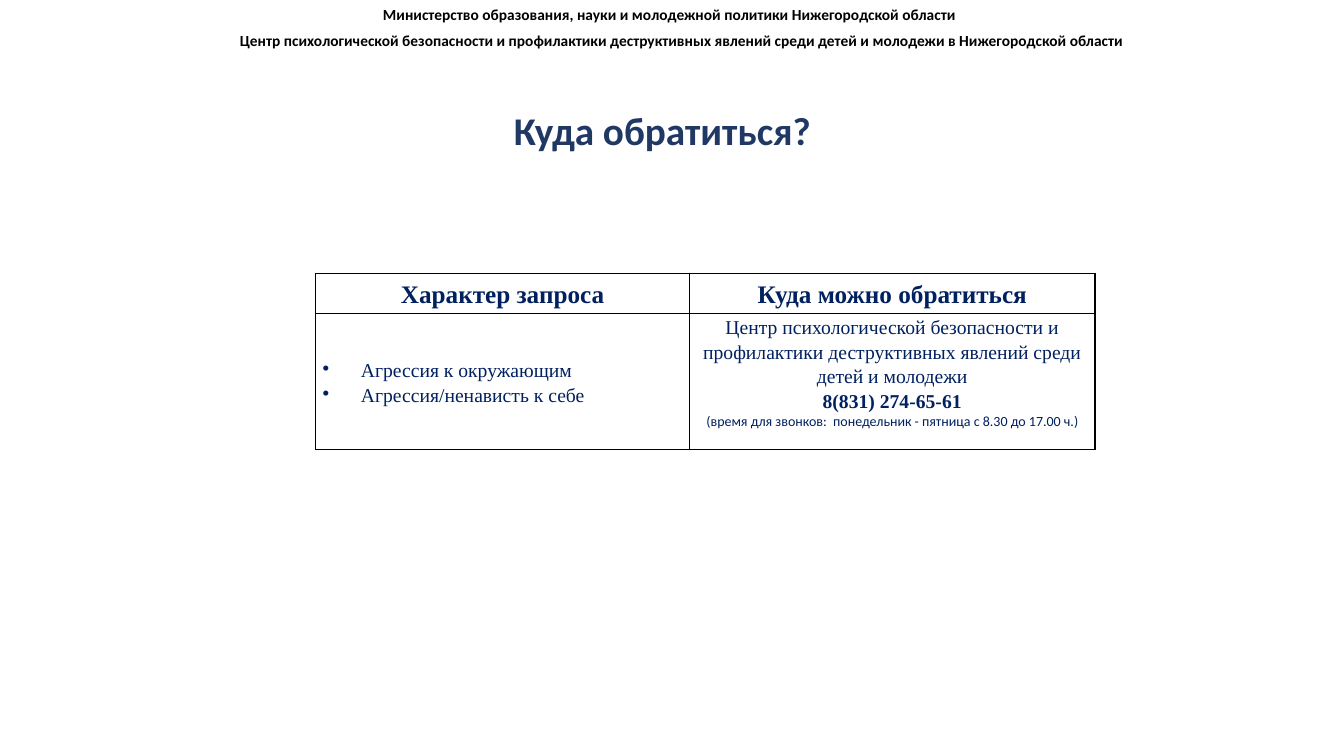
"""Builds a slide that tells whom to contact for psychological help."""
from lxml.etree import SubElement
from pptx import Presentation
from pptx.dml.color import RGBColor
from pptx.enum.text import MSO_ANCHOR, PP_ALIGN
from pptx.oxml.ns import qn
from pptx.util import Inches, Pt

QUESTION = "Куда обратиться?"
QUESTION_BOX = (4.98, 1, 3.18, 0.57)
ORGANISATIONS = [
    ("Министерство образования, науки и молодежной политики Нижегородской области",
     (3.7, 0, 8.32, 0.29)),
    ("Центр психологической безопасности и профилактики деструктивных явлений "
     "среди детей и молодежи в Нижегородской области", (2.28, 0.26, 9.78, 0.29)),
]
CONTACTS = [
    [[("Характер запроса", "heading")], [("Куда можно обратиться", "heading")]],
    [[("Агрессия к окружающим", "request"), ("Агрессия/ненависть к себе", "request")],
     [("Центр психологической безопасности и профилактики деструктивных явлений "
       "среди детей и молодежи", "centre"),
      ("8(831) 274-65-61", "phone"),
      ("(время для звонков:  понедельник - пятница с 8.30 до 17.00 ч.)", "hours")]],
]
CONTACTS_CORNER = (3.13, 2.71)
COLUMN_WIDTHS = (3.71, 4.02)
ROW_HEIGHTS = (0.4, 1.35)
BULLET_INDENT = 0.38

SERIF, SANS = "Times New Roman", "Calibri"
NAVY = "002060"
FONTS = {
    "question": (dict(name=SANS, size=Pt(28), bold=True), "203864"),
    "organisation": (dict(name=SANS, size=Pt(11), bold=True), "000000"),
    "heading": (dict(name=SERIF, size=Pt(18), bold=True), NAVY),
    "request": (dict(name=SERIF, size=Pt(14), bold=False), NAVY),
    "centre": (dict(name=SERIF, size=Pt(14), bold=False), NAVY),
    "phone": (dict(name=SERIF, size=Pt(14), bold=True), NAVY),
    "hours": (dict(name=SANS, size=Pt(10), bold=False), NAVY),
}
CENTRED = dict(alignment=PP_ALIGN.CENTER, line_spacing=1.15)
PARAGRAPHS = {
    "question": dict(alignment=PP_ALIGN.CENTER, line_spacing=1.0),
    "organisation": {},
    "heading": CENTRED,
    "request": dict(alignment=PP_ALIGN.LEFT, line_spacing=1.15),
    "centre": CENTRED,
    "phone": CENTRED,
    "hours": dict(alignment=PP_ALIGN.CENTER),
}
CELL_FORMAT = dict(margin_left=Inches(0.07), margin_right=Inches(0.07),
                   margin_top=0, margin_bottom=0)


def apply(target, values):
    for attribute, value in values.items():
        setattr(target, attribute, value)


def paint(colour_format, colour):
    colour_format.rgb = RGBColor.from_string(colour)


def write(frame, lines):
    for index, (wording, role) in enumerate(lines):
        paragraph = frame.add_paragraph() if index else frame.paragraphs[0]
        if role == "request":
            properties = paragraph._p.get_or_add_pPr()
            properties.set("marL", str(Inches(BULLET_INDENT)))
            properties.set("indent", str(-Inches(BULLET_INDENT)))
            SubElement(properties, qn("a:buChar"), char="•")
        apply(paragraph, PARAGRAPHS[role])
        run = paragraph.add_run()
        run.text = wording
        values, colour = FONTS[role]
        apply(run.font, values)
        paint(run.font.color, colour)


def outline(cell):
    properties = cell._tc.get_or_add_tcPr()
    for side in ("lnL", "lnR", "lnT", "lnB"):
        border = SubElement(properties, qn(f"a:{side}"), w=str(Pt(1)))
        fill = SubElement(border, qn("a:solidFill"))
        SubElement(fill, qn("a:srgbClr"), val="000000")


def add_contacts(slide):
    left, top = CONTACTS_CORNER
    size = (sum(COLUMN_WIDTHS), sum(ROW_HEIGHTS))
    contacts = slide.shapes.add_table(len(ROW_HEIGHTS), len(COLUMN_WIDTHS),
                                      *map(Inches, (left, top, *size))).table
    apply(contacts, dict(first_row=False, horz_banding=False))
    for column, width in zip(contacts.columns, COLUMN_WIDTHS):
        column.width = Inches(width)
    for row, height, entries in zip(contacts.rows, ROW_HEIGHTS, CONTACTS):
        row.height = Inches(height)
        for cell, lines in zip(row.cells, entries):
            apply(cell, CELL_FORMAT)
            is_centre = lines[0][1] == "centre"
            cell.vertical_anchor = MSO_ANCHOR.TOP if is_centre else MSO_ANCHOR.MIDDLE
            outline(cell)
            cell.fill.background()
            write(cell.text_frame, lines)


def main():
    deck = Presentation()
    apply(deck, dict(slide_width=Inches(13.33), slide_height=Inches(7.5)))
    slide = deck.slides.add_slide(deck.slide_layouts[5])
    question = slide.shapes.title
    apply(question, dict(zip(("left", "top", "width", "height"), map(Inches, QUESTION_BOX))))
    apply(question.text_frame, dict(word_wrap=False, vertical_anchor=MSO_ANCHOR.TOP))
    write(question.text_frame, [(QUESTION, "question")])
    for organisation, box in ORGANISATIONS:
        header = slide.shapes.add_textbox(*map(Inches, box)).text_frame
        header.word_wrap = True
        write(header, [(organisation, "organisation")])
    add_contacts(slide)
    deck.save("out.pptx")


if __name__ == "__main__":
    main()
